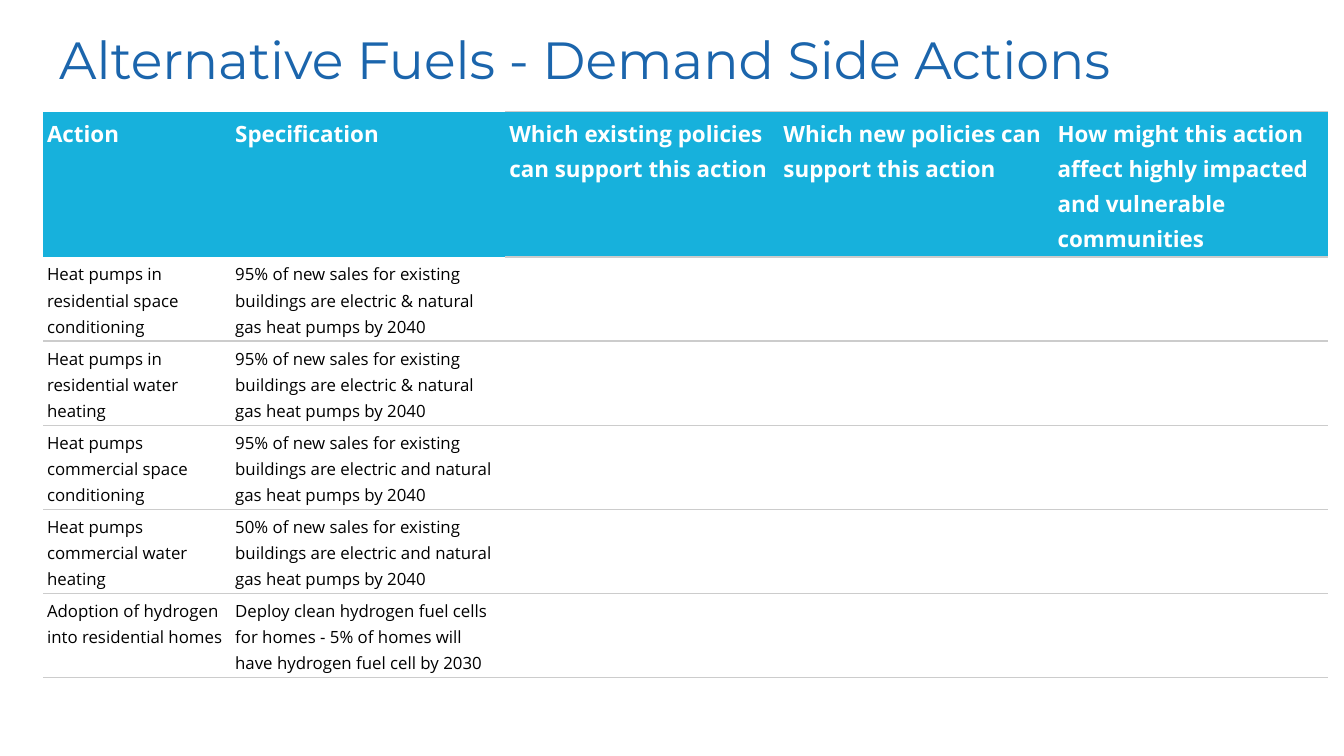
from lxml import etree
from pptx import Presentation, util as u
from pptx.dml.color import RGBColor
from pptx.enum import text
from pptx.oxml.ns import qn

HEADING = "Alternative Fuels - Demand Side Actions"
HEADERS = [
    "Action",
    "Specification",
    "Which existing policies can support this action",
    "Which new policies can support this action",
    "How might this action affect highly impacted and vulnerable communities",
]
ACTIONS = [
    ("Heat pumps in residential space conditioning",
     "95% of new sales for existing buildings are electric & natural gas heat pumps by 2040"),
    ("Heat pumps in residential water heating",
     "95% of new sales for existing buildings are electric & natural gas heat pumps by 2040"),
    ("Heat pumps commercial space conditioning",
     "95% of new sales for existing buildings are electric and natural gas heat pumps by 2040"),
    ("Heat pumps commercial water heating",
     "50% of new sales for existing buildings are electric and natural gas heat pumps by 2040"),
    ("Adoption of hydrogen into residential homes",
     "Deploy clean hydrogen fuel cells for homes - 5% of homes will have hydrogen fuel cell by 2030"),
]
SLIDE_WIDTH = 10
SLIDE_SIZE = {"slide_width": SLIDE_WIDTH, "slide_height": SLIDE_WIDTH * 9 / 16}
COLUMN_WIDTHS = [1.4] + [2.04] * 4
ROW_HEIGHTS = [0.3] + [0.22] * 4 + [0.39]
TITLE_FONT = {"name": "Montserrat", "size": u.Pt(28), "bold": False}
HEADER_FONT = {"name": "Open Sans", "size": u.Pt(12), "bold": True}
BODY_FONT = {"name": "Open Sans", "size": u.Pt(9), "bold": False}
TITLE_PLACE = {"left": 0.34, "top": 0.1, "width": 9.14, "height": 0.63}
CELL_MARGINS = {"margin_left": 0.03, "margin_top": 0.02, "margin_right": 0.03, "margin_bottom": 0.02}
TABLE_FLAGS = {"first_row": False, "horz_banding": False}
RULE = "CCCCCC"


def set_all(target, values):
    for name, value in values.items():
        setattr(target, name, value)


def inches(values):
    return {name: u.Inches(value) for name, value in values.items()}


def paint(color_format, color):
    color_format.rgb = RGBColor.from_string(color)


def write(paragraph, words, font, color):
    run = paragraph.add_run()
    run.text = words
    set_all(run.font, font)
    paint(run.font.color, color)


def set_borders(cell, ruled):
    properties = cell._tc.get_or_add_tcPr()
    for position, side in enumerate("LRTB"):
        line = etree.Element(qn(f"a:ln{side}"), w=str(u.Pt(0.75)))
        if side in ruled:
            fill = etree.SubElement(line, qn("a:solidFill"))
            etree.SubElement(fill, qn("a:srgbClr"), val=RULE)
        else:
            etree.SubElement(line, qn("a:noFill"))
        properties.insert(position, line)


deck = Presentation()
set_all(deck, inches(SLIDE_SIZE))
slide = deck.slides.add_slide(deck.slide_layouts[5])

title = slide.shapes.title
set_all(title, inches(TITLE_PLACE))
frame = title.text_frame
set_all(frame, {"vertical_anchor": text.MSO_ANCHOR.TOP, "word_wrap": True,
                "auto_size": text.MSO_AUTO_SIZE.NONE})
set_all(frame, {f"margin_{side}": u.Inches(0.1) for side in ("left", "top", "right", "bottom")})
frame.paragraphs[0].alignment = text.PP_ALIGN.LEFT
write(frame.paragraphs[0], HEADING, TITLE_FONT, "1B65AC")

rows = [HEADERS] + ACTIONS
table = slide.shapes.add_table(
    len(rows), len(HEADERS), u.Inches(0.32), u.Inches(0.83),
    u.Inches(sum(COLUMN_WIDTHS)), u.Inches(sum(ROW_HEIGHTS))).table
set_all(table, TABLE_FLAGS)
for column, width in zip(table.columns, COLUMN_WIDTHS):
    column.width = u.Inches(width)
for row, height in zip(table.rows, ROW_HEIGHTS):
    row.height = u.Inches(height)

for r, words in enumerate(rows):
    is_header = r == 0
    font, color = (HEADER_FONT, "FFFFFF") if is_header else (BODY_FONT, "000000")
    for c in range(len(HEADERS)):
        cell = table.cell(r, c)
        set_all(cell, inches(CELL_MARGINS))
        if is_header:
            cell.fill.solid()
            paint(cell.fill.fore_color, "17B1DC")
        else:
            cell.fill.background()
        if c < len(words):
            paragraph = cell.text_frame.paragraphs[0]
            paragraph.line_spacing = 1.15
            write(paragraph, words[c], font, color)
        ruled = "TB"
        if c < 2 and r < 2:
            ruled = "" if is_header else "B"
        set_borders(cell, ruled)

deck.save("out.pptx")
